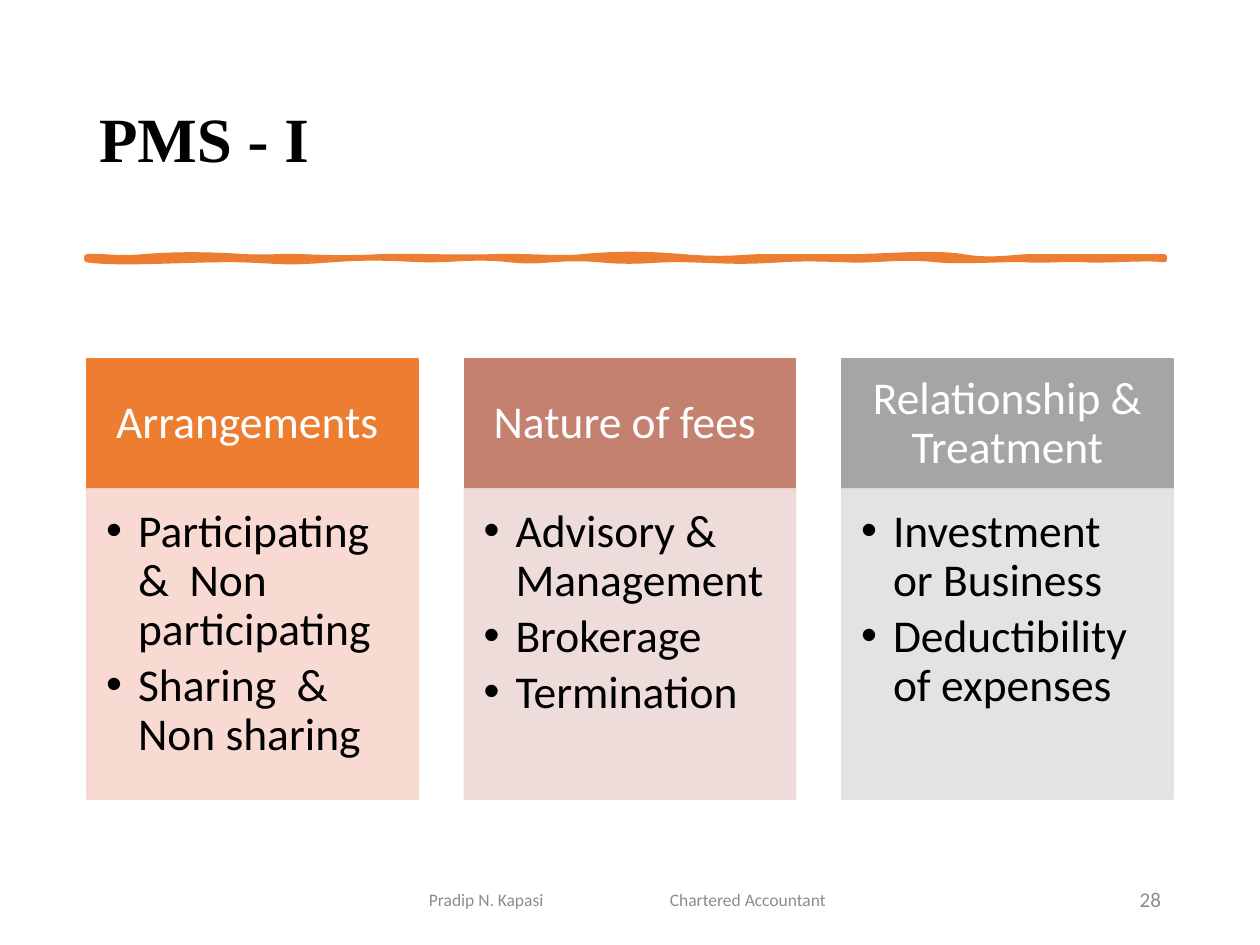
from dataclasses import dataclass

from lxml import etree
from pptx import Presentation
from pptx.dml.color import RGBColor
from pptx.enum.shapes import MSO_SHAPE
from pptx.enum.text import MSO_ANCHOR, MSO_AUTO_SIZE, PP_ALIGN
from pptx.oxml.ns import qn
from pptx.util import Pt

RECT = MSO_SHAPE.RECTANGLE
TOP, MIDDLE = MSO_ANCHOR.TOP, MSO_ANCHOR.MIDDLE
LEFT, CENTER, RIGHT = PP_ALIGN.LEFT, PP_ALIGN.CENTER, PP_ALIGN.RIGHT


@dataclass(frozen=True)
class Theme:
    title_font: str = "Times New Roman"
    body_font: str = "Calibri"
    bullet_font: str = "Arial"
    ink: str = "000000"
    paper: str = "FFFFFF"
    muted: str = "8C8C8C"
    accent: str = "ED7D31"
    title_size: int = 36
    column_size: int = 26
    footer_size: int = 10
    number_size: int = 12


THEME = Theme()

# Content
TITLE = "PMS - I"
COLUMNS = [
    ("Arrangements ", "ED7D31", "F8D7CE",
     ["Participating  &  Non participating", "Sharing  & Non sharing"]),
    ("Nature of fees ", "C48170", "EDD9D7",
     ["Advisory & Management", "Brokerage", "Termination"]),
    ("Relationship & Treatment", "A5A5A5", "E1E1E1",
     ["Investment or Business", "Deductibility of expenses"]),
]
FOOTER = "Pradip N. Kapasi\tChartered Accountant"
NUMBER = "28"

# Brush stroke edges in hundredths of an inch: start, then cubic curves
UPPER_EDGE = [
    (69, 204),
    (82, 203), (92, 206), (114, 204), (137, 202), (166, 202), (194, 204),
    (222, 205), (220, 203), (240, 204), (260, 205), (284, 205), (302, 204),
    (320, 203), (362, 205), (391, 204), (420, 203), (442, 206), (462, 204),
    (483, 202), (506, 201), (542, 204), (577, 207), (591, 204), (605, 204),
    (618, 204), (650, 204), (676, 204), (701, 204), (741, 200), (764, 204),
    (788, 208), (804, 204), (818, 204), (832, 204), (878, 204), (924, 204),
]
LOWER_EDGE = [
    (924, 206),
    (911, 204), (877, 207), (861, 206), (845, 205), (829, 207), (815, 206),
    (802, 205), (762, 208), (744, 206), (726, 204), (709, 205), (690, 206),
    (672, 207), (650, 204), (619, 206), (588, 208), (578, 207), (548, 206),
    (517, 205), (510, 209), (476, 206), (442, 203), (432, 209), (405, 206),
    (378, 203), (362, 206), (342, 206), (322, 206), (301, 203), (263, 206),
    (224, 209), (225, 207), (191, 206), (157, 205), (96, 210), (69, 206),
]

# Layout in px
PX_PER_INCH = 126
EMU_PER_INCH = 914400
SLIDE = (1260, 945)
TITLE_BOX = (87, 51, 1086, 183)
FOOTER_BOX = (417, 876, 426, 50)
NUMBER_BOX = (890, 876, 283, 50)
GRID_LEFT, GRID_TOP, GRID_WIDTH = 87, 359, 1086
COLUMN_WIDTH, HEAD_HEIGHT, PANEL_HEIGHT = 331, 130, 310
HEAD_INSETS = (25, 15, 25, 15)
PANEL_INSETS = (19, 19, 25, 29)
TEXT_INSETS = (12, 6, 12, 6)
BULLET_INDENT = 32
FOOTER_TAB = 241


def px(value):
    return round(value * EMU_PER_INCH / PX_PER_INCH)


def place(shape, box):
    shape.left, shape.top, shape.width, shape.height = map(px, box)


def prepare(frame, anchor, insets):
    frame.word_wrap = True
    frame.auto_size = MSO_AUTO_SIZE.NONE
    frame.vertical_anchor = anchor
    (frame.margin_left, frame.margin_top,
     frame.margin_right, frame.margin_bottom) = map(px, insets)


def write(para, text, size, color, align, font=THEME.body_font, bold=False):
    para.alignment = align
    para.line_spacing = 0.9
    span = para.add_run()
    span.text = text
    span.font.name = font
    span.font.size = Pt(size)
    span.font.bold = bold
    span.font.color.rgb = RGBColor.from_string(color)


def paint(shape, color, line_width):
    shape.shadow.inherit = False
    shape.fill.solid()
    shape.fill.fore_color.rgb = RGBColor.from_string(color)
    shape.line.color.rgb = RGBColor.from_string(color)
    shape.line.width = Pt(line_width)


def add_block(page, box, color, anchor, insets):
    block = page.shapes.add_shape(RECT, *map(px, box))
    paint(block, color, 1)
    prepare(block.text_frame, anchor, insets)
    return block


def set_opacity(shape, percent):
    for color in shape._element.spPr.iter(qn("a:srgbClr")):
        etree.SubElement(color, qn("a:alpha")).set("val", str(percent * 1000))


def add_bullet(para):
    props = para._p.get_or_add_pPr()
    props.set("marL", str(px(BULLET_INDENT)))
    props.set("indent", str(-px(BULLET_INDENT)))
    etree.SubElement(props, qn("a:buFont")).set("typeface", THEME.bullet_font)
    etree.SubElement(props, qn("a:buChar")).set("char", "•")


def add_tab_stop(para, position):
    stops = etree.SubElement(para._p.get_or_add_pPr(), qn("a:tabLst"))
    stop = etree.SubElement(stops, qn("a:tab"))
    stop.set("pos", str(px(position)))
    stop.set("algn", "l")


def bend(segments):
    """Join every three line segments into one cubic curve."""
    for i in range(0, len(segments), 3):
        curve = etree.Element(qn("a:cubicBezTo"))
        segments[i].addprevious(curve)
        for segment in segments[i:i + 3]:
            curve.append(segment[0])
            segment.getparent().remove(segment)


def add_brush_stroke(page):
    start, *rest = UPPER_EDGE + LOWER_EDGE
    builder = page.shapes.build_freeform(*start, scale=EMU_PER_INCH / 100)
    builder.add_line_segments(rest, close=True)
    stroke = builder.convert_to_shape()
    segments = list(stroke._element.spPr.iter(qn("a:lnTo")))
    turn = len(UPPER_EDGE) - 1
    bend(segments[:turn])
    bend(segments[turn + 1:turn + len(LOWER_EDGE)])
    paint(stroke, THEME.accent, 3.25)


def add_small_text(page, box, text, size, align):
    note = page.shapes.add_textbox(*map(px, box))
    prepare(note.text_frame, MIDDLE, TEXT_INSETS)
    para = note.text_frame.paragraphs[0]
    write(para, text, size, THEME.muted, align)
    return para


def add_column(page, left, heading, head_color, panel_color, items):
    head = add_block(page, (left, GRID_TOP, COLUMN_WIDTH, HEAD_HEIGHT),
                     head_color, MIDDLE, HEAD_INSETS)
    write(head.text_frame.paragraphs[0], heading, THEME.column_size, THEME.paper, CENTER)
    panel = add_block(page, (left, GRID_TOP + HEAD_HEIGHT, COLUMN_WIDTH, PANEL_HEIGHT),
                      panel_color, TOP, PANEL_INSETS)
    set_opacity(panel, 90)
    frame = panel.text_frame
    for i, item in enumerate(items):
        para = frame.add_paragraph() if i else frame.paragraphs[0]
        write(para, item, THEME.column_size, THEME.ink, LEFT)
        para.space_after = Pt(4)
        add_bullet(para)


def main():
    deck = Presentation()
    deck.slide_width, deck.slide_height = map(px, SLIDE)
    page = deck.slides.add_slide(deck.slide_layouts[5])

    # Title and brush stroke
    title = page.shapes.title
    place(title, TITLE_BOX)
    prepare(title.text_frame, MIDDLE, TEXT_INSETS)
    write(title.text_frame.paragraphs[0], TITLE, THEME.title_size, THEME.ink, LEFT,
          THEME.title_font, True)
    add_brush_stroke(page)

    # Footer
    footer = add_small_text(page, FOOTER_BOX, FOOTER, THEME.footer_size, LEFT)
    add_tab_stop(footer, FOOTER_TAB)
    add_small_text(page, NUMBER_BOX, NUMBER, THEME.number_size, RIGHT)

    # Columns spread evenly over the grid
    pitch = (GRID_WIDTH - COLUMN_WIDTH) / (len(COLUMNS) - 1)
    for i, column in enumerate(COLUMNS):
        add_column(page, GRID_LEFT + i * pitch, *column)

    deck.save("out.pptx")


if __name__ == "__main__":
    main()
